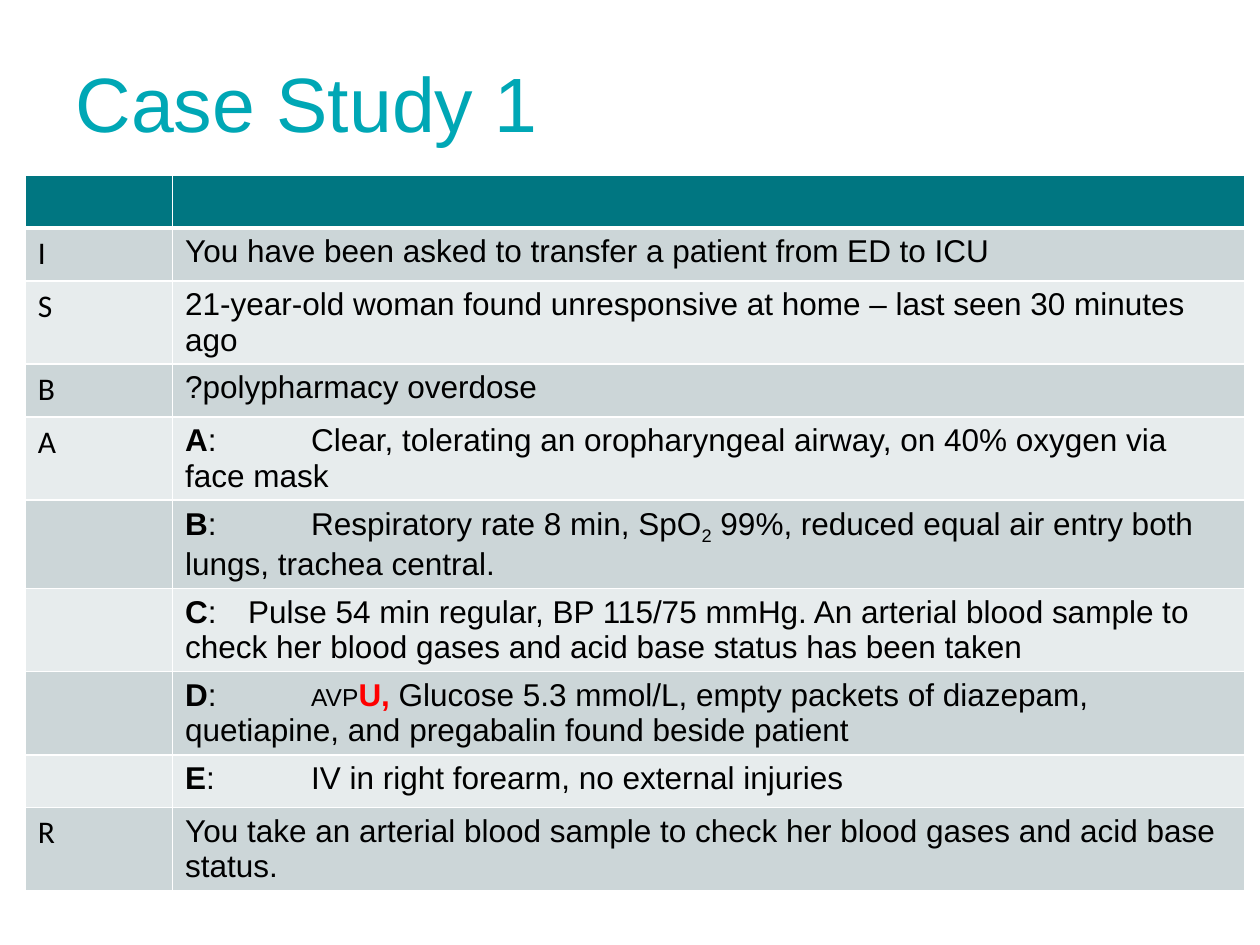
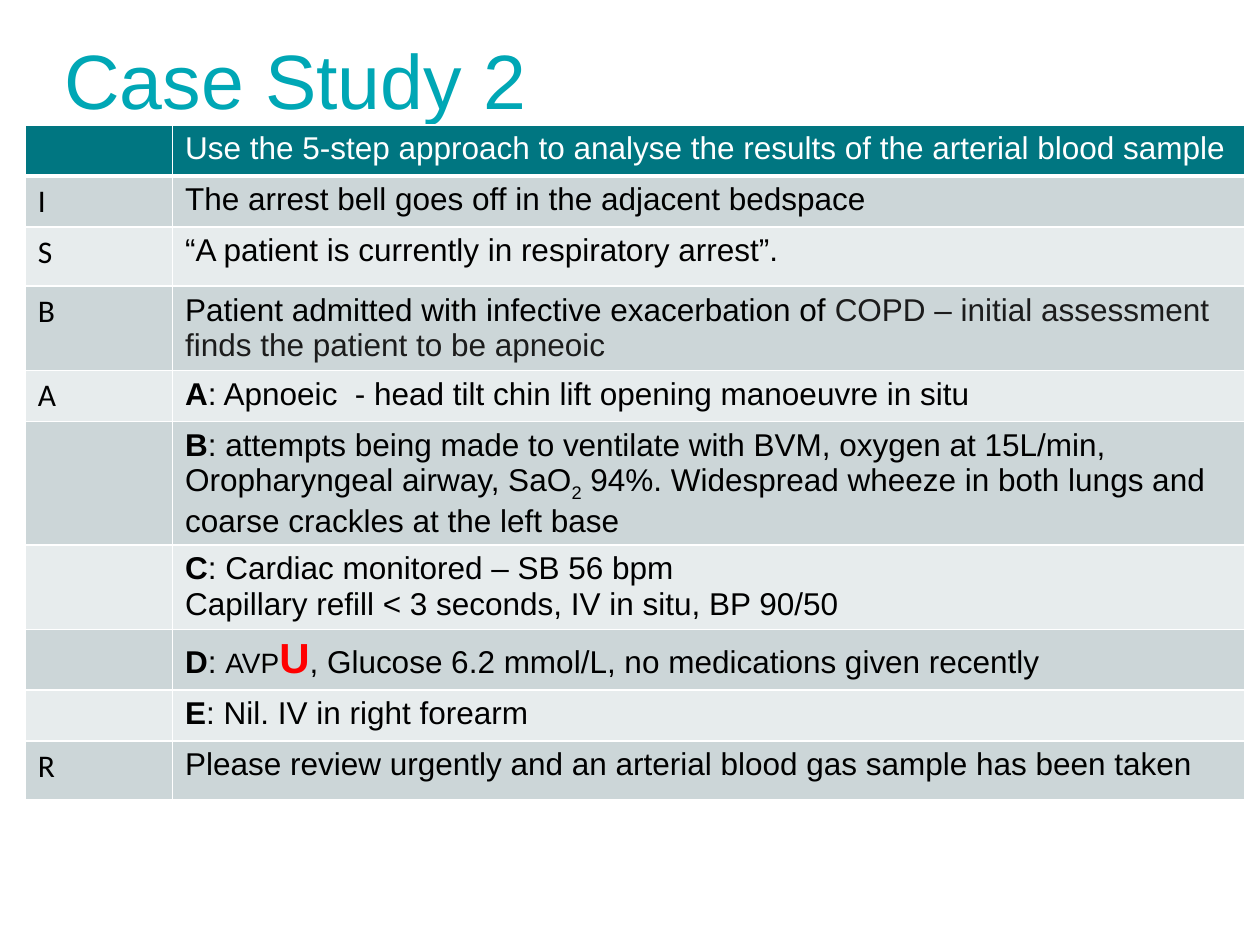
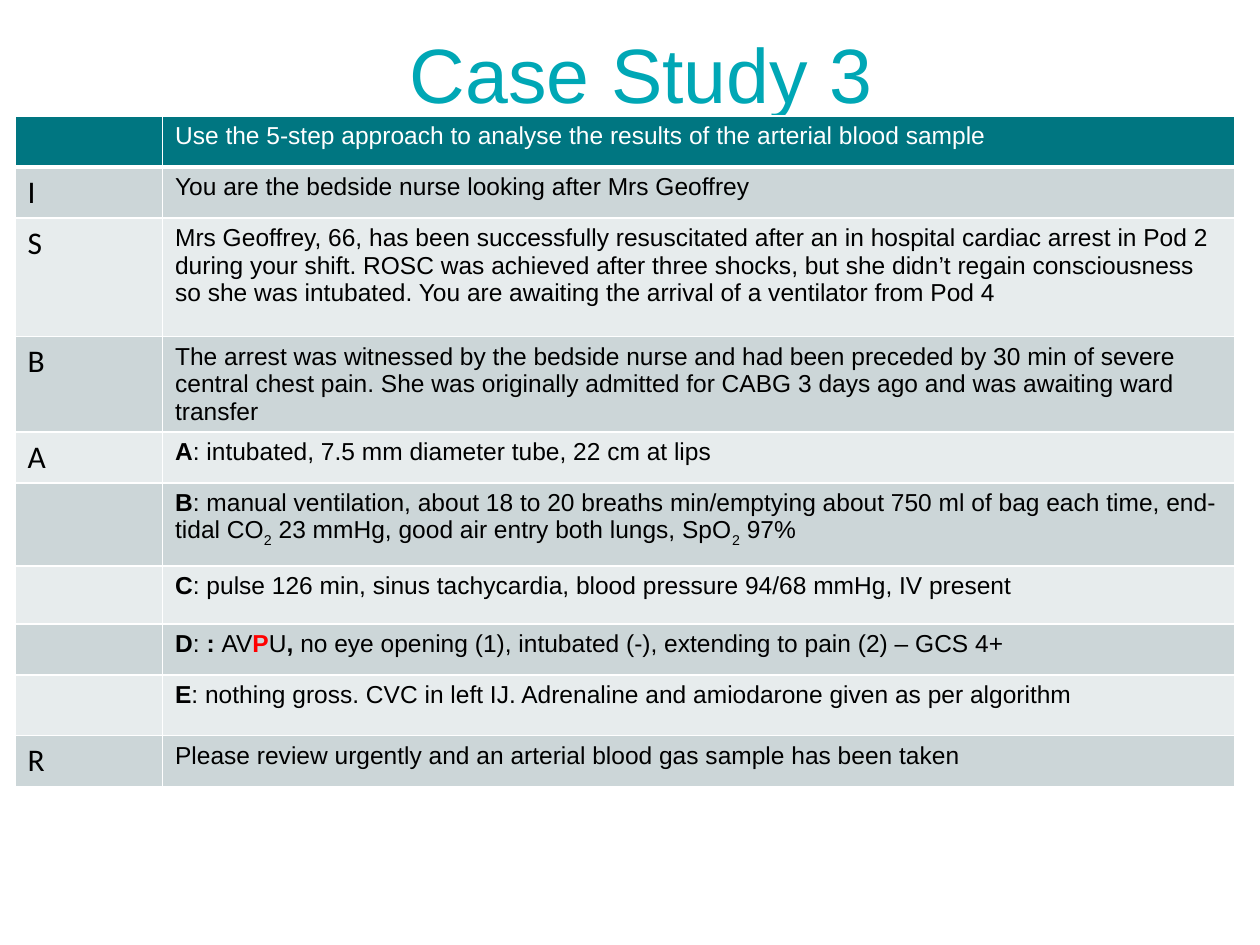
from lxml import etree
from pptx import Presentation
from pptx.dml.color import RGBColor
from pptx.enum import text
from pptx.oxml.ns import qn
from pptx.util import Inches, Pt

COLORS = {
    "title": "00A7B5", "header": "007681", "dark band": "CCD6D8",
    "light band": "E7ECED", "border": "FFFFFF", "header text": "FFFFFF",
    "body": "000000", "soft": "1C1C1C", "alert": "FF0000",
}
BOLD = {"bold": True}
SUB = {"sub": True}
ALERT = {"bold": True, "color": "alert"}
SOFT = {"color": "soft"}
LETTERS = ["", "I", "S", "B", "A", "", "", "", "", "R"]
COLUMN_WIDTHS = [1.17, 8.51]
FIVE_STEPS = "Use the 5-step approach to analyse the results of the arterial blood sample"
REVIEW = "Please review urgently and an arterial blood gas sample has been taken"

# A row is plain text, or a list of (text, style) spans.
CASES = [
    {
        "title": "Case Study 1", "title box": (0.5, 0.3, 9, 1.01),
        "align": text.PP_ALIGN.LEFT, "table at": (0.2, 1.39), "size": 18,
        "heights": [0.42, 0.42, 0.65, 0.42, 0.65, 0.65, 0.65, 0.65, 0.42, 0.65],
        "tabs": {4: 1, 5: 1, 6: 0.5, 7: 1, 8: 1},
        "rows": [
            "",
            "You have been asked to transfer a patient from ED to ICU",
            "21-year-old woman found unresponsive at home – last seen 30 minutes ago",
            "?polypharmacy overdose",
            [("A", BOLD), (": \tClear, tolerating an oropharyngeal airway, on 40% oxygen "
                           "via face mask", {})],
            [("B", BOLD), (": \tRespiratory rate 8 min, SpO", {}), ("2", SUB),
             (" 99%, reduced equal air entry both lungs, trachea central.", {})],
            [("C", BOLD), (": \tPulse 54 min regular, BP 115/75 mmHg. An arterial blood sample "
                           "to check her blood gases and acid base status has been taken", {})],
            [("D", BOLD), (": \t", {}), ("AVP", {"size": 14}), ("U, ", ALERT),
             ("Glucose 5.3 mmol/L, empty packets of diazepam, quetiapine, and pregabalin "
              "found beside patient", {})],
            [("E", BOLD), (": \tIV in right forearm, no external injuries", {})],
            "You take an arterial blood sample to check her blood gases and acid base status.",
        ],
    },
    {
        "title": "Case Study 2", "title box": (0.41, 0, 9, 1.25),
        "align": text.PP_ALIGN.LEFT, "table at": (0.2, 0.99), "size": 18,
        "heights": [0.38, 0.38, 0.47, 0.67, 0.38, 0.96, 0.67, 0.48, 0.38, 0.47],
        "tabs": {},
        "rows": [
            FIVE_STEPS,
            "The arrest bell goes off in the adjacent bedspace",
            "“A patient is currently in respiratory arrest”.",
            [("Patient admitted with infective exacerbation of ", {}),
             ("COPD – initial assessment finds the patient to be apneoic", SOFT)],
            [("A", BOLD), (": Apnoeic  - head tilt chin lift opening manoeuvre in situ", {})],
            [("B", BOLD), (": attempts being made to ventilate with BVM, oxygen at 15L/min, "
                           "Oropharyngeal airway, SaO", {}), ("2", SUB),
             (" 94%. Widespread wheeze in both lungs and coarse crackles at the left base", {})],
            [("C", BOLD), (": Cardiac monitored – SB 56 bpm", {}),
             ("\nCapillary refill < 3 seconds, IV in situ, BP 90/50", {})],
            [("D", BOLD), (": ", {}), ("AVP", {"size": 16}), ("U", {**ALERT, "size": 24}),
             (", Glucose 6.2 mmol/L, no medications given recently", {})],
            [("E", BOLD), (": Nil. IV in right forearm", {})],
            REVIEW,
        ],
    },
    {
        "title": "Case Study 3", "title box": (0.59, 0.13, 9, 0.9),
        "align": text.PP_ALIGN.CENTER, "table at": (0.12, 0.92), "size": 14,
        "heights": [0.38, 0.38, 0.94, 0.66, 0.38, 0.66, 0.46, 0.38, 0.48, 0.38],
        "tabs": {},
        "rows": [
            FIVE_STEPS,
            "You are the bedside nurse looking after Mrs Geoffrey",
            "Mrs Geoffrey, 66, has been successfully resuscitated after an in hospital cardiac "
            "arrest in Pod 2 during your shift. ROSC was achieved after three shocks, but she "
            "didn’t regain consciousness so she was intubated. You are awaiting the arrival of "
            "a ventilator from Pod 4",
            "The arrest was witnessed by the bedside nurse and had been preceded by 30 min of "
            "severe central chest pain. She was originally admitted for CABG 3 days ago and was "
            "awaiting ward transfer",
            [("A", BOLD), (": intubated, 7.5 mm diameter tube, 22 cm at lips", {})],
            [("B", BOLD), (": manual ventilation, about 18 to 20 breaths min/emptying about "
                           "750 ml of bag each time, end-tidal CO", {}), ("2", SUB),
             (" 23 mmHg, good air entry both lungs, SpO", {}), ("2", SUB), (" 97%", {})],
            [("C", BOLD), (": pulse 126 min, sinus tachycardia, blood pressure 94/68 mmHg, "
                           "IV present", {})],
            [("D", BOLD), (": ", {}), (": ", BOLD), ("AV", {}), ("P", ALERT), ("U", {}),
             (", ", BOLD), ("no eye opening (1), intubated (-), extending to pain (2) – GCS 4+",
                            {})],
            [("E", BOLD), (": nothing gross. CVC in left IJ. Adrenaline and amiodarone given "
                           "as per algorithm", {})],
            REVIEW,
        ],
    },
]


def write_spans(para, spans, font, size, color):
    """Add one run per span; a leading newline becomes a line break."""
    for words, style in spans:
        if words.startswith("\n"):
            para.add_line_break()
        span = para.add_run()
        span.text = words.lstrip("\n")
        span.font.name = font
        span.font.size = Pt(style.get("size", size))
        span.font.bold = style.get("bold", False)
        span.font.color.rgb = RGBColor.from_string(COLORS[style.get("color", color)])
        if style.get("sub"):
            span.font._element.set("baseline", "-25000")


def paint_cell(cell, fill, bottom_width):
    """Draw the four borders, then the fill, which must follow them in the XML."""
    properties = cell._tc.get_or_add_tcPr()
    for side, width in (("L", 1), ("R", 1), ("T", 1), ("B", bottom_width)):
        line = etree.SubElement(properties, qn(f"a:ln{side}"), w=str(Pt(width)))
        solid = etree.SubElement(line, qn("a:solidFill"))
        etree.SubElement(solid, qn("a:srgbClr"), val=COLORS["border"])
    cell.fill.solid()
    cell.fill.fore_color.rgb = RGBColor.from_string(COLORS[fill])


deck = Presentation()
deck.slide_width, deck.slide_height = Inches(10), Inches(7.5)

for case in CASES:
    page = deck.slides.add_slide(deck.slide_layouts[5])

    title = page.shapes.title
    title.left, title.top, title.width, title.height = map(Inches, case["title box"])
    frame = title.text_frame
    frame.text = case["title"]
    frame.auto_size = text.MSO_AUTO_SIZE.NONE
    frame.vertical_anchor = text.MSO_ANCHOR.MIDDLE
    para = frame.paragraphs[0]
    para.alignment = case["align"]
    heading = para.runs[0].font
    heading.name, heading.size = "Arial", Pt(44)
    heading.color.rgb = RGBColor.from_string(COLORS["title"])

    left, top = case["table at"]
    table = page.shapes.add_table(
        len(LETTERS), len(COLUMN_WIDTHS), Inches(left), Inches(top),
        Inches(sum(COLUMN_WIDTHS)), Inches(sum(case["heights"]))).table
    for column, width in zip(table.columns, COLUMN_WIDTHS):
        column.width = Inches(width)

    for index, (letter, content) in enumerate(zip(LETTERS, case["rows"])):
        table.rows[index].height = Inches(case["heights"][index])
        is_header = index == 0
        fill = "header" if is_header else "dark band" if index % 2 else "light band"
        letter_cell, content_cell = table.cell(index, 0), table.cell(index, 1)
        for cell in (letter_cell, content_cell):
            paint_cell(cell, fill, 3 if is_header else 1)

        if letter:
            write_spans(letter_cell.text_frame.paragraphs[0], [(letter, {})],
                        "Calibri", 18, "body")
        para = content_cell.text_frame.paragraphs[0]
        if index in case["tabs"]:
            stops = etree.SubElement(para._p.get_or_add_pPr(), qn("a:tabLst"))
            etree.SubElement(stops, qn("a:tab"),
                             pos=str(Inches(case["tabs"][index])), algn="l")
        if content:
            spans = [(content, {})] if isinstance(content, str) else content
            write_spans(para, spans, "Arial", case["size"],
                        "header text" if is_header else "body")

deck.save("out.pptx")
